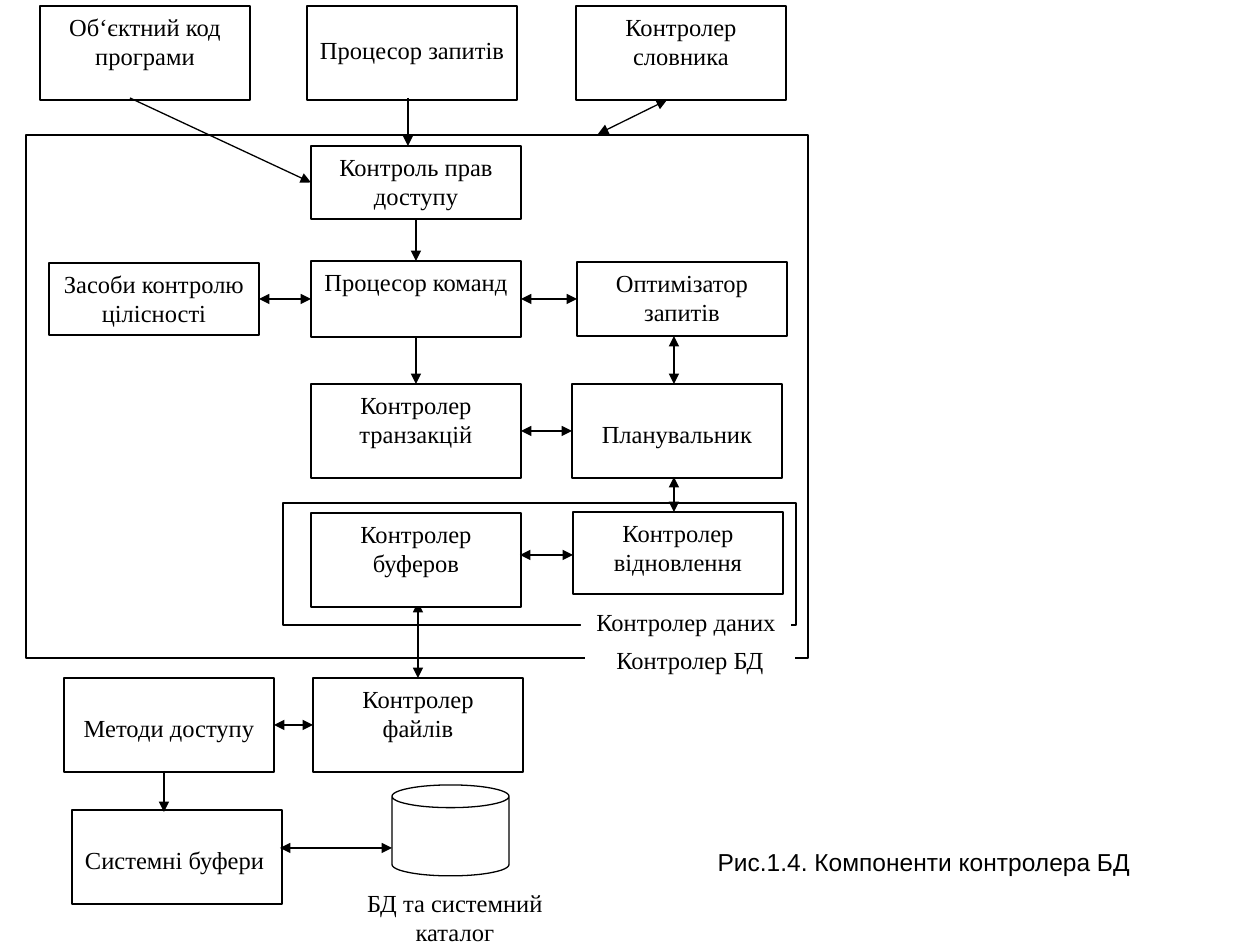
from dataclasses import dataclass

from lxml.etree import SubElement
from pptx import Presentation
from pptx.dml.color import RGBColor
from pptx.enum.shapes import MSO_CONNECTOR as Connector, MSO_SHAPE as Shape
from pptx.enum.text import MSO_ANCHOR as Anchor, PP_ALIGN as Align
from pptx.oxml.ns import qn
from pptx.util import Emu, Pt

PX = 914400 // 126
TOP, LEFT, BOTTOM, RIGHT = range(4)


@dataclass(frozen=True)
class Theme:
    ink: RGBColor = RGBColor(0, 0, 0)
    paper: RGBColor = RGBColor(255, 255, 255)
    label_font: str = "Times New Roman"
    caption_font: str = "Arial"
    text_size: Pt = Pt(14)
    line_width: Pt = Pt(0.75)


class Diagram:
    """Draws boxes, frames, captions and arrows on one slide in one theme."""

    def __init__(self, slide, theme):
        self.shapes = slide.shapes
        self.theme = theme

    def outline(self, kind, area, filled=True, lined=True):
        shape = self.shapes.add_shape(kind, *(Emu(n * PX) for n in area))
        shape.shadow.inherit = False
        if filled:
            shape.fill.solid()
            shape.fill.fore_color.rgb = self.theme.paper
        else:
            shape.fill.background()
        if lined:
            shape.line.color.rgb = self.theme.ink
            shape.line.width = self.theme.line_width
        else:
            shape.line.fill.background()
        return shape

    def add_text(self, shape, text, font, align=Align.CENTER):
        para = shape.text_frame.paragraphs[0]
        para.alignment = align
        span = para.add_run()
        span.text = text
        span.font.name = font
        span.font.size = self.theme.text_size
        span.font.color.rgb = self.theme.ink

    def box(self, text, area, top=6, side=13, align=Align.CENTER, lined=True):
        shape = self.outline(Shape.RECTANGLE, area, lined=lined)
        frame = shape.text_frame
        frame.word_wrap = True
        frame.vertical_anchor = Anchor.TOP
        frame.margin_top = Emu(top * PX)
        frame.margin_left = frame.margin_right = Emu(side * PX)
        self.add_text(shape, text, self.theme.label_font, align)
        return shape

    def frame(self, area):
        return self.outline(Shape.RECTANGLE, area, filled=False)

    def caption(self, text, area):
        box = self.shapes.add_textbox(*(Emu(n * PX) for n in area))
        box.text_frame.word_wrap = False
        box.text_frame.vertical_anchor = Anchor.MIDDLE
        self.add_text(box, text, self.theme.caption_font)

    def arrow(self, start, end, both=True):
        """Each end is either an (x, y) point or a (shape, side) pair."""
        line = self.shapes.add_connector(Connector.STRAIGHT, 0, 0, 0, 0)
        if isinstance(start[0], int):
            line.begin_x, line.begin_y = (Emu(n * PX) for n in start)
        else:
            line.begin_connect(*start)
        if isinstance(end[0], int):
            line.end_x, line.end_y = (Emu(n * PX) for n in end)
        else:
            line.end_connect(*end)
        line.line.color.rgb = self.theme.ink
        line.line.width = self.theme.line_width
        properties = line._element.spPr
        stroke = properties.find(qn("a:ln"))
        for tag in ("a:headEnd", "a:tailEnd") if both else ("a:tailEnd",):
            SubElement(stroke, qn(tag), type="triangle")
        SubElement(properties, qn("a:effectLst"))


def main():
    deck = Presentation()
    deck.slide_width, deck.slide_height = Emu(1260 * PX), Emu(945 * PX)
    page = deck.slides.add_slide(deck.slide_layouts[6])
    diagram = Diagram(page, Theme())
    box, arrow = diagram.box, diagram.arrow
    wide, tall = 210, 94
    second_line = 35

    box("Процесор запитів", (307, 6, wide, tall), top=29, side=0)
    box("Об‘єктний код програми", (40, 6, wide, tall))
    box("Контролер словника", (576, 6, wide, tall))

    files = box("Контролер файлів", (313, 678, wide, tall))
    methods = box("Методи доступу", (64, 678, wide, tall), top=second_line)
    box("Системні буфери", (72, 810, wide, tall), top=second_line, align=Align.LEFT)
    diagram.outline(Shape.CAN, (392, 785, 117, 91))

    diagram.frame((26, 135, 782, 523))
    box("Контролер БД", (585, 639, wide, 37), lined=False)
    arrow((418, 602), (files, TOP))
    arrow((files, LEFT), (methods, RIGHT))
    arrow((164, 771), (164, 812), both=False)
    arrow((280, 848), (392, 848))
    box("БД та системний каталог", (350, 882, wide, 63), lined=False)

    rights = box("Контроль прав доступу", (311, 146, wide, 73))
    commands = box("Процесор команд", (311, 261, wide, 76))
    box("Контролер буферов", (311, 513, wide, tall))
    transactions = box("Контролер транзакцій", (311, 384, wide, tall))
    box("Контролер відновлення", (573, 512, wide, 82))
    planner = box("Планувальник", (572, 384, wide, tall), top=second_line)
    optimizer = box("Оптимізатор запитів", (577, 262, wide, 74))
    integrity = box("Засоби контролю цілісності", (49, 263, wide, 72))
    diagram.frame((283, 503, 513, 122))

    arrow((130, 98), (rights, LEFT), both=False)
    arrow((408, 98), (408, 146), both=False)
    arrow((667, 100), (598, 134))
    arrow((rights, BOTTOM), (commands, TOP), both=False)
    arrow((commands, BOTTOM), (transactions, TOP), both=False)
    arrow((integrity, RIGHT), (commands, LEFT))
    arrow((commands, RIGHT), (optimizer, LEFT))
    arrow((transactions, RIGHT), (planner, LEFT))
    arrow((674, 384), (674, 336))
    arrow((674, 477), (674, 512))
    arrow((520, 555), (573, 555))

    box("Контролер даних", (581, 601, wide, 37), lined=False)
    diagram.caption("Рис.1.4. Компоненти контролера БД", (704, 843, 440, 38))
    deck.save("out.pptx")


if __name__ == "__main__":
    main()
